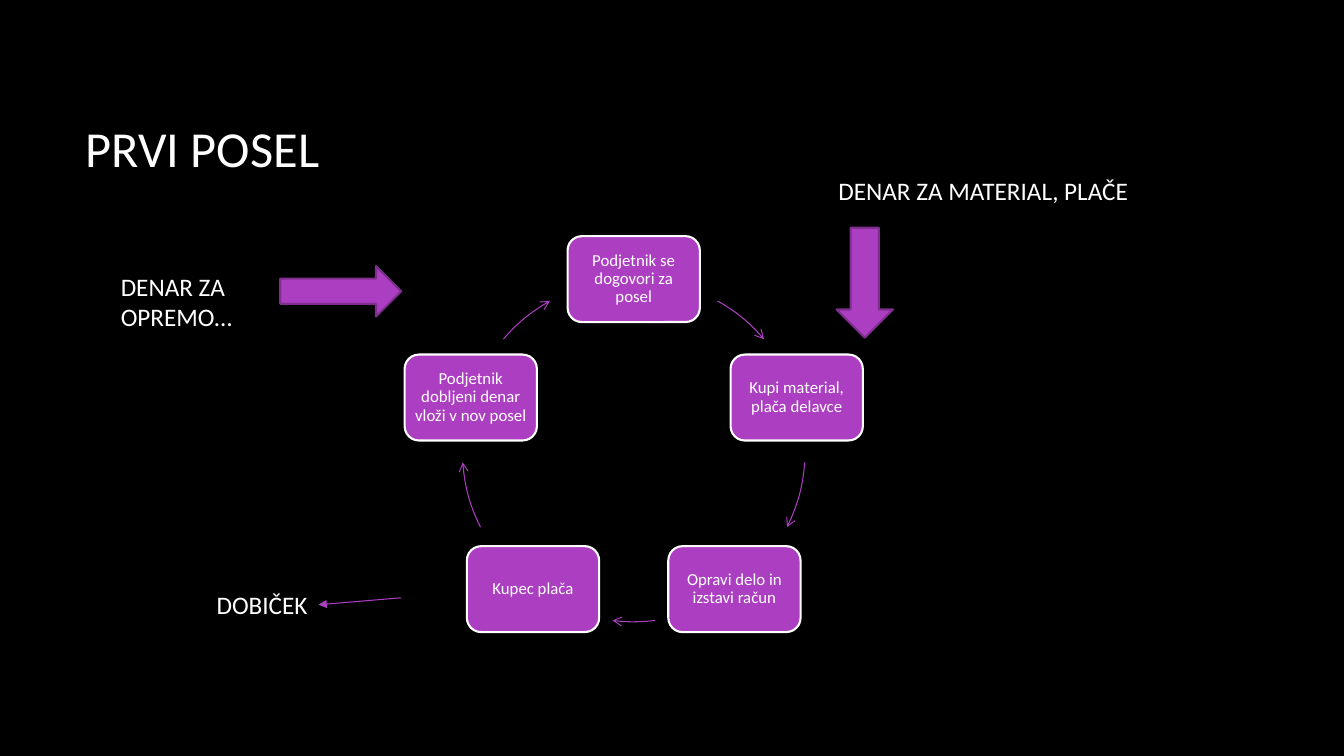
from dataclasses import dataclass
from math import cos, radians, sin

from lxml import etree
from pptx import Presentation
from pptx.dml.color import RGBColor
from pptx.enum.shapes import MSO_CONNECTOR, MSO_SHAPE
from pptx.enum.text import MSO_ANCHOR, MSO_AUTO_SIZE, PP_ALIGN
from pptx.oxml.ns import qn
from pptx.util import Pt

BLACK = RGBColor(0x00, 0x00, 0x00)
WHITE = RGBColor(0xFF, 0xFF, 0xFF)
PURPLE = RGBColor(0xAC, 0x3E, 0xC1)
DARK_PURPLE = RGBColor(0x7F, 0x2E, 0x8F)
FONT = "Calibri"
ROUNDED, ARC = MSO_SHAPE.ROUNDED_RECTANGLE, MSO_SHAPE.ARC
RIGHT_ARROW, DOWN_ARROW = MSO_SHAPE.RIGHT_ARROW, MSO_SHAPE.DOWN_ARROW
STRAIGHT = MSO_CONNECTOR.STRAIGHT
LEFT, CENTER = PP_ALIGN.LEFT, PP_ALIGN.CENTER
TOP, MIDDLE = MSO_ANCHOR.TOP, MSO_ANCHOR.MIDDLE
NO_FIT, GROW = MSO_AUTO_SIZE.NONE, MSO_AUTO_SIZE.SHAPE_TO_FIT_TEXT

CENTER_X, CENTER_Y, RADIUS = 452.7, 321.8, 122.4
STEP_WIDTH, STEP_HEIGHT = 94.5, 61.4
RIGHT_SIDE = 3


@dataclass(frozen=True)
class Step:
    text: str
    arc_start: float
    arc_end: float


@dataclass(frozen=True)
class Label:
    text: str
    left: float
    top: float
    width: float
    height: float
    wrap: bool = False


@dataclass(frozen=True)
class BlockArrow:
    kind: MSO_SHAPE
    left: float
    top: float
    width: float
    height: float


STEPS = (
    Step("Podjetnik se dogovori za posel", 29.3, 49.5),
    Step("Kupi material, plača delavce", 94, 116.6),
    Step("Opravi delo in izstavi račun", 172.9, 187.1),
    Step("Kupec plača", 243.4, 266),
    Step("Podjetnik dobljeni denar vloži v nov posel", 310.5, 330.7),
)
EQUIPMENT = Label("DENAR ZA OPREMO…", 79.2, 190.1, 108, 50.9, wrap=True)
PROFIT = Label("DOBIČEK", 147.6, 417.4, 79.9, 29.1)
MATERIAL = Label("DENAR ZA MATERIAL, PLAČE", 591.8, 121.6, 223.2, 29.1)
BLOCK_ARROWS = (
    BlockArrow(RIGHT_ARROW, 200.2, 190.1, 86.4, 36),
    BlockArrow(DOWN_ARROW, 597.6, 162.7, 40.3, 78.5),
)


def write(shape, text: str, size: float, align: PP_ALIGN, anchor: MSO_ANCHOR):
    frame = shape.text_frame
    frame.word_wrap = True
    frame.vertical_anchor = anchor
    para = frame.paragraphs[0]
    para.alignment = align
    span = para.add_run()
    span.text = text
    span.font.name = FONT
    span.font.size = Pt(size)
    span.font.color.rgb = WHITE
    return frame


def set_line(shape, color: RGBColor, width: float, head: str = "") -> None:
    shape.line.color.rgb = color
    shape.line.width = Pt(width)
    if head:
        line = shape.line._get_or_add_ln()
        etree.SubElement(line, qn("a:tailEnd"), type=head)


def add_filled(page, kind: MSO_SHAPE, left: float, top: float, width: float,
               height: float, outline: RGBColor):
    shape = page.shapes.add_shape(kind, Pt(left), Pt(top), Pt(width), Pt(height))
    shape.shadow.inherit = False
    shape.fill.solid()
    shape.fill.fore_color.rgb = PURPLE
    set_line(shape, outline, 1.5)
    return shape


def add_step(page, step: Step, angle: float) -> None:
    left = CENTER_X + RADIUS * sin(radians(angle)) - STEP_WIDTH / 2
    top = CENTER_Y - RADIUS * cos(radians(angle)) - STEP_HEIGHT / 2
    box = add_filled(page, ROUNDED, left, top, STEP_WIDTH, STEP_HEIGHT, WHITE)
    frame = write(box, step.text, 12, CENTER, MIDDLE)
    frame.margin_left = frame.margin_right = Pt(3.4)
    frame.margin_top = frame.margin_bottom = Pt(3.4)
    frame.paragraphs[0].line_spacing = 0.9


def add_cycle_arrow(page, step: Step) -> None:
    arc = page.shapes.add_shape(ARC, Pt(CENTER_X - RADIUS), Pt(CENTER_Y - RADIUS),
                                Pt(2 * RADIUS), Pt(2 * RADIUS))
    arc.shadow.inherit = False
    arc.fill.background()
    for index, angle in enumerate((step.arc_start, step.arc_end)):
        arc.adjustments[index] = (angle - 90) % 360 * 0.6
    set_line(arc, PURPLE, 0.75, "arrow")


def add_label(page, label: Label):
    box = page.shapes.add_textbox(Pt(label.left), Pt(label.top),
                                  Pt(label.width), Pt(label.height))
    frame = write(box, label.text, 18, LEFT, TOP)
    frame.word_wrap = label.wrap
    frame.auto_size = GROW
    return box


def add_profit_arrow(page, profit_box) -> None:
    arrow = page.shapes.add_connector(STRAIGHT, Pt(286.6), Pt(427), Pt(227.5), Pt(432))
    arrow.end_connect(profit_box, RIGHT_SIDE)
    set_line(arrow, PURPLE, 0.75, "triangle")
    etree.SubElement(arrow._element.spPr, qn("a:effectLst"))


def add_title(page) -> None:
    title = page.shapes.title
    title.left, title.top = Pt(54), Pt(48.2)
    title.width, title.height = Pt(797.8), Pt(114.5)
    write(title, "PRVI POSEL", 36, LEFT, MIDDLE).auto_size = NO_FIT


def main() -> None:
    deck = Presentation()
    deck.slide_width, deck.slide_height = Pt(960), Pt(540)
    page = deck.slides.add_slide(deck.slide_layouts[5])
    page.background.fill.solid()
    page.background.fill.fore_color.rgb = BLACK
    add_title(page)
    for index, step in enumerate(STEPS):
        add_step(page, step, index * 360 / len(STEPS))
        add_cycle_arrow(page, step)
    add_label(page, EQUIPMENT)
    profit_box = add_label(page, PROFIT)
    add_label(page, MATERIAL)
    for arrow in BLOCK_ARROWS:
        add_filled(page, arrow.kind, arrow.left, arrow.top, arrow.width,
                   arrow.height, DARK_PURPLE)
    add_profit_arrow(page, profit_box)
    deck.save("out.pptx")


if __name__ == "__main__":
    main()
